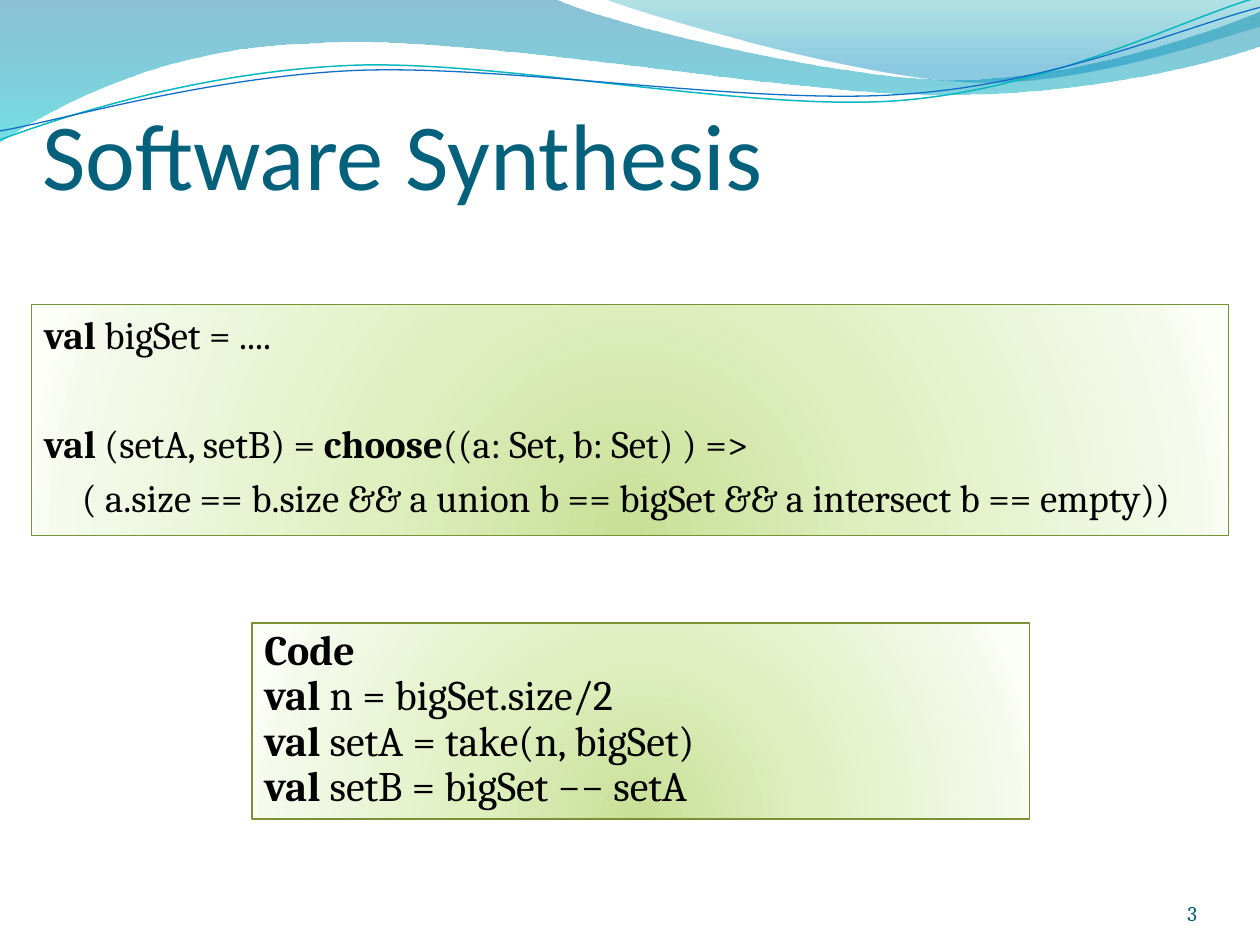
import pptx
import pptx.dml.color
import pptx.enum.shapes
import pptx.enum.text
import pptx.oxml
import pptx.oxml.ns
import pptx.util

Cm = pptx.util.Cm
Pt = pptx.util.Pt
Anchor = pptx.enum.text.MSO_ANCHOR
Align = pptx.enum.text.PP_ALIGN
qn = pptx.oxml.ns.qn
NAMESPACE = pptx.oxml.ns.nsdecls("a")

COLOURS = {
    "title": "04617B", "number": "045D75", "code": "000000", "border": "7B9135",
    "teal line": "0AB8BF", "blue line": "0F6FC6",
}
LINEAR = '<a:lin ang="5400000" scaled="0"/>'
RADIAL = ('<a:path path="circle"><a:fillToRect l="50000" t="130000" '
          'r="50000" b="-30000"/></a:path>')
GRADIENTS = {
    "main wave": ([(0, "0074A1", 45), (100, "00C6CF", 55)], LINEAR),
    "right wave": ([(0, "00A1A9", 30), (80, "008BBF", 45)], LINEAR),
    "panel": ([(0, "C9DF97", 100), (43, "E0F0C1", 100),
               (93, "F5FAEC", 100), (100, "FCFEF8", 100)], RADIAL),
}
MAIN_WAVE = [
    (0, 0), (11.18, -0.03),
    (12.09, 0.43, 16.87, 1.6, 19.25, 1.6), (21.67, 1.6, 24.33, 0.66, 25.4, 0.23),
    (25.43, 0.91),
    (24.97, 1.12, 22.1, 1.93, 18.95, 1.91), (15.8, 1.91, 9.7, 0.71, 6.53, 0.86),
    (3.28, 0.91, 1.17, 2.11, -0.03, 2.87),
]
RIGHT_WAVE = [
    (12.17, -0.03), (12.93, 0.28, 17.32, 1.57, 19.53, 1.65),
    (21.74, 1.75, 24.41, 0.81, 25.4, 0.53), (25.4, 0),
]
TEAL_LINE = [
    (0, 2.82), (1.22, 2.36, 4.01, 1.45, 7.04, 1.32),
    (10.03, 1.19, 15.06, 2.26, 18.11, 2.03), (21.16, 1.8, 23.83, 0.38, 25.35, -0.05),
]
BLUE_LINE = [
    (0, 2.64), (1.19, 2.44, 4.17, 1.55, 7.19, 1.42),
    (10.24, 1.3, 15.16, 2.13, 18.21, 1.9), (21.23, 1.7, 23.9, 0.53, 25.4, 0.15),
]


def colour(name):
    return pptx.dml.color.RGBColor.from_string(COLOURS[name])


def fill_gradient(shape, name):
    stops, direction = GRADIENTS[name]
    stop_xml = ""
    for place, value, alpha in stops:
        opacity = f'<a:alpha val="{alpha * 1000}"/>' if alpha < 100 else ""
        stop_xml += (f'<a:gs pos="{place * 1000}"><a:srgbClr val="{value}">'
                     f'{opacity}</a:srgbClr></a:gs>')
    shape.fill.gradient()
    properties = shape._element.spPr
    properties.replace(
        properties.find(qn("a:gradFill")),
        pptx.oxml.parse_xml(
            f'<a:gradFill {NAMESPACE} rotWithShape="1">'
            f'<a:gsLst>{stop_xml}</a:gsLst>{direction}</a:gradFill>'))


def add_curve(page, box, segments, close):
    left, top = box[:2]
    corners = [(Cm(left + segment[-2]), Cm(top + segment[-1])) for segment in segments]
    builder = page.shapes.build_freeform(*corners[0])
    builder.add_line_segments(corners[1:], close=close)
    shape = builder.convert_to_shape()
    shape.shadow.inherit = False
    sides = list(shape._element.spPr.iter(qn("a:lnTo")))
    for side, segment in zip(sides, segments[1:]):
        if len(segment) == 6:
            points = "".join(
                f'<a:pt x="{Cm(left + x) - shape.left}" y="{Cm(top + y) - shape.top}"/>'
                for x, y in zip(segment[::2], segment[1::2]))
            side.getparent().replace(side, pptx.oxml.parse_xml(
                f'<a:cubicBezTo {NAMESPACE}>{points}</a:cubicBezTo>'))
    return shape


def add_waves(page, box):
    for name, segments in (("main wave", MAIN_WAVE), ("right wave", RIGHT_WAVE)):
        wave = add_curve(page, box, segments, True)
        fill_gradient(wave, name)
        wave.line.fill.background()
    for name, segments, width in (("teal line", TEAL_LINE, 0.85),
                                  ("blue line", BLUE_LINE, 0.75)):
        curve = add_curve(page, box, segments, False)
        curve.fill.background()
        curve.line.color.rgb = colour(name)
        curve.line.width = Pt(width)


def style(para, font, size, name):
    para.font.name = font
    para.font.size = Pt(size)
    para.font.color.rgb = colour(name)


def add_label(page, box, text, font, size, name, align):
    frame = page.shapes.add_textbox(*map(Cm, box)).text_frame
    frame.word_wrap = True
    frame.vertical_anchor = Anchor.BOTTOM
    frame.margin_left = frame.margin_right = 0
    frame.margin_top = frame.margin_bottom = 0
    para = frame.paragraphs[0]
    para.text = text
    para.alignment = align
    style(para, font, size, name)


def add_code_panel(page, box, lines, size):
    panel = page.shapes.add_shape(
        pptx.enum.shapes.MSO_SHAPE.RECTANGLE, *map(Cm, box))
    panel.shadow.inherit = False
    fill_gradient(panel, "panel")
    panel.line.color.rgb = colour("border")
    panel.line.width = Pt(0.75)
    frame = panel.text_frame
    frame.word_wrap = True
    frame.vertical_anchor = Anchor.TOP
    paras = []
    for index, line in enumerate(lines):
        para = frame.add_paragraph() if index else frame.paragraphs[0]
        para.alignment = Align.LEFT
        style(para, "Cambria", size, "code")
        for text, bold in line:
            span = para.add_run()
            span.text = text
            span.font.bold = bold
        paras.append(para)
    return paras


def add_specification(page, box):
    paras = add_code_panel(page, box, [
        [("val ", True), ("bigSet = ....", False)],
        [("val", True), (" (setA, setB) = ", False), ("choose", True),
         ("((a: Set, b: Set) ) =>", False)],
        [("( a.size == b.size && a union b == bigSet && a intersect b == empty))",
          False)],
    ], 22.2)
    for para, gap in zip(paras, (4.4, 35.4, 4.4)):
        para.space_before = Pt(gap)
    paras[-1]._p.get_or_add_pPr().set("marL", str(Cm(0.76)))


def add_solution(page, box):
    statements = ["n = bigSet.size/2", "setA = take(n, bigSet)", "setB = bigSet −− setA"]
    lines = [[("Code", True)]]
    lines += [[("val ", True), (statement, False)] for statement in statements]
    for para in add_code_panel(page, box, lines, 24):
        para.line_spacing = 0.9


def main():
    deck = pptx.Presentation()
    deck.slide_width, deck.slide_height = Cm(25.4), Cm(19.05)
    page = deck.slides.add_slide(deck.slide_layouts[6])
    add_waves(page, (0, 0, 25.4, 2.87))
    add_label(page, (0.85, 1.48, 22.23, 2.75), "Software Synthesis",
              "Calibri", 54, "title", Align.LEFT)
    add_specification(page, (0.64, 6.14, 24.13, 4.65))
    add_solution(page, (5.08, 12.56, 15.67, 3.95))
    add_label(page, (22.01, 17.66, 2.12, 1.01), "3",
              "Cambria", 12, "number", Align.RIGHT)
    deck.save("out.pptx")


if __name__ == "__main__":
    main()
